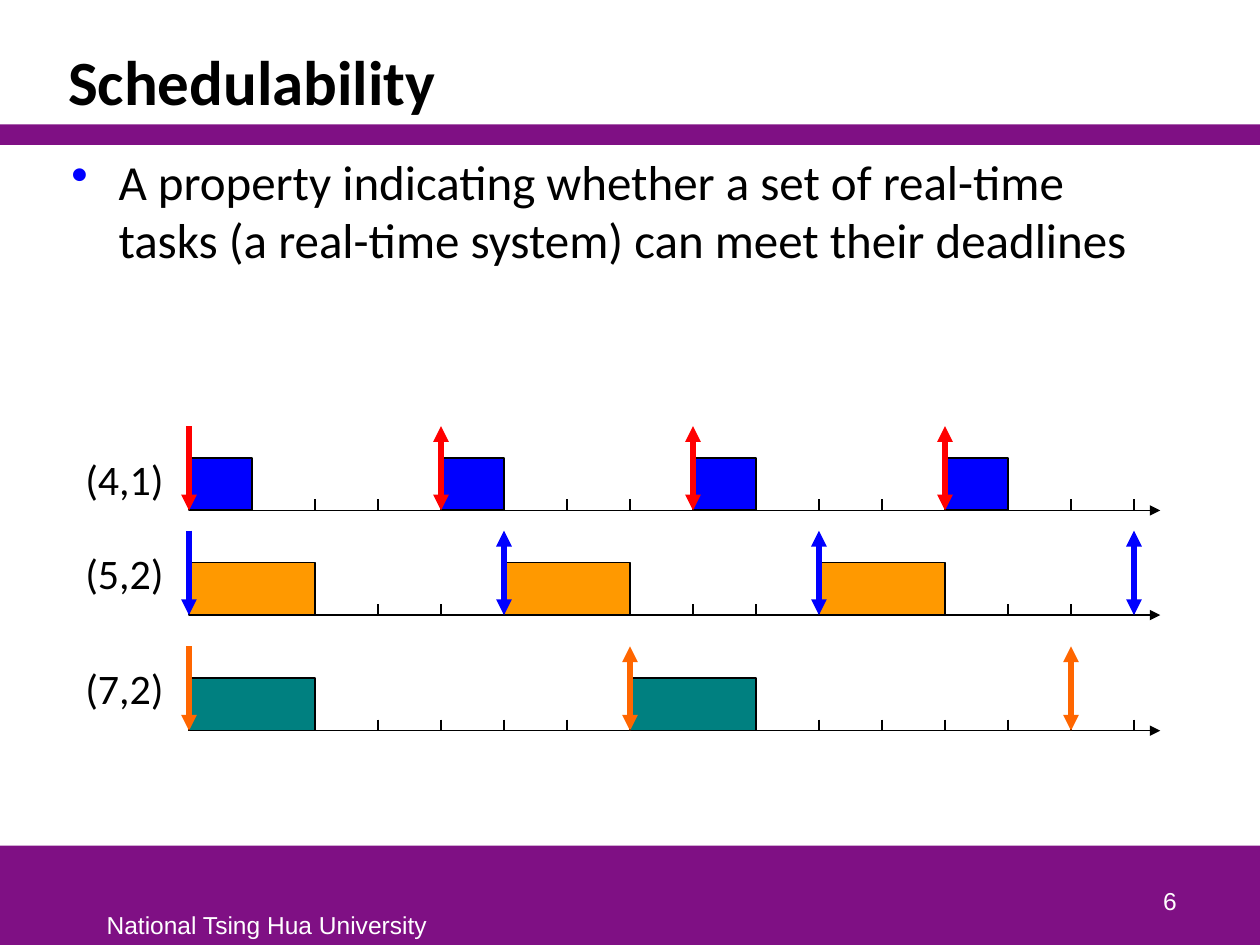
from lxml.etree import SubElement
from pptx import Presentation
from pptx.dml.color import RGBColor
from pptx.enum.shapes import MSO_CONNECTOR as CONN, MSO_SHAPE as SHAPE
from pptx.enum.text import MSO_ANCHOR as ANCHOR, PP_ALIGN as ALIGN
from pptx.oxml.ns import qn
from pptx.util import Cm, Pt

PURPLE, BLACK, WHITE, BLUE = "7F1084", "000000", "FFFFFF", "0000FF"
SLIDE_W, SLIDE_H = 25.4, 19.05
UNIT, LAST_TIME = 1.27, 15


def rgb(color):
    """Turn a hex string into a colour."""
    return RGBColor.from_string(color)


def add_bullet(p, color, indent):
    """Give a paragraph a coloured bullet with a hanging indent."""
    pPr = p._p.get_or_add_pPr()
    pPr.set("marL", str(Cm(indent)))
    pPr.set("indent", str(-Cm(indent)))
    SubElement(SubElement(pPr, qn("a:buClr")), qn("a:srgbClr"), val=color)
    SubElement(pPr, qn("a:buChar"), char="•")


def write(tf, text, size, color=BLACK, font="Calibri", bold=False, align=ALIGN.LEFT,
          anchor=ANCHOR.TOP, wrap=True, spacing=None, bullet=None):
    """Fill a text frame with one formatted paragraph."""
    tf.word_wrap, tf.vertical_anchor = wrap, anchor
    p = tf.paragraphs[0]
    p.alignment = align
    if spacing:
        p.line_spacing = spacing
    if bullet:
        add_bullet(p, bullet, 0.95)
    r = p.add_run()
    r.text = text
    r.font.name, r.font.size, r.font.bold = font, Pt(size), bold
    r.font.color.rgb = rgb(color)


def add_text(slide, box, text, size, **fmt):
    """Add a text box holding one paragraph."""
    sp = slide.shapes.add_textbox(*map(Cm, box))
    write(sp.text_frame, text, size, **fmt)


def add_rect(slide, box, fill, line=None):
    """Add a filled rectangle, outlined if a line colour is given."""
    sp = slide.shapes.add_shape(SHAPE.RECTANGLE, *map(Cm, box))
    sp.shadow.inherit = False
    sp.fill.solid()
    sp.fill.fore_color.rgb = rgb(fill)
    if line:
        sp.line.color.rgb = rgb(line)
        sp.line.width = Pt(1)
    else:
        sp.line.fill.background()


def add_line(slide, x1, y1, x2, y2, color=BLACK, width=0.75, ends=()):
    """Add a straight line with arrowheads at the named ends."""
    sp = slide.shapes.add_connector(CONN.STRAIGHT, Cm(x1), Cm(y1), Cm(x2), Cm(y2))
    sp.line.color.rgb = rgb(color)
    sp.line.width = Pt(width)
    for end in ends:
        SubElement(sp.line._get_or_add_ln(), qn(f"a:{end}"), type="triangle")
    SubElement(sp._element.spPr, qn("a:effectLst"))


def add_header(slide, box):
    """Place the title and the band below it."""
    x, y, w, h = box
    sp = slide.shapes.title
    sp.left, sp.top, sp.width, sp.height = map(Cm, (x + 1.12, y + 0.64, 22.78, 1.88))
    write(sp.text_frame, "Schedulability", 36, bold=True, anchor=ANCHOR.BOTTOM, spacing=0.85)
    add_rect(slide, (x, y + h - 0.41, w, 0.41), PURPLE)


def add_footer(slide, box):
    """Place the footer band with the university and the slide number."""
    x, y, w, h = box
    add_rect(slide, box, PURPLE)
    add_text(slide, (x + 1.9, y + 1.17, 7.01, 0.84), "National Tsing Hua University", 14,
             color=WHITE, font="Arial", wrap=False)
    add_text(slide, (x + w - 6.71, y + 0.25, 5.28, 1.27), "6", 14, color=WHITE,
             font="Arial", align=ALIGN.RIGHT, anchor=ANCHOR.BOTTOM)


def add_timeline(slide, box, period, runtime, job_color, arrow_color, label_dy):
    """Draw one periodic task: label, axis, ticks, jobs and release arrows."""
    x, y, w, h = box
    start, base = x + 2.34, y + h
    add_text(slide, (x, y + label_dy, 2.11, 1.3), f"({period},{runtime})", 24, wrap=False)
    add_line(slide, start, base, x + w - 0.43, base)
    add_line(slide, x + w - 0.64, base, x + w, base, ends=["tailEnd"])
    for t in range(LAST_TIME + 1):
        add_line(slide, start + t * UNIT, base - 0.22, start + t * UNIT, base)

    releases = range(0, LAST_TIME + 1, period)
    for t in releases:
        if t + runtime <= LAST_TIME:
            add_rect(slide, (start + t * UNIT, base - 1.06, runtime * UNIT, 1.06),
                     job_color, BLACK)
    for t in releases:
        ends = ["headEnd", "tailEnd"] if t else ["tailEnd"]
        add_line(slide, start + t * UNIT, y, start + t * UNIT, base, arrow_color, 3, ends)


def main():
    """Build the slide and save it."""
    prs = Presentation()
    prs.slide_width, prs.slide_height = Cm(SLIDE_W), Cm(SLIDE_H)
    slide = prs.slides.add_slide(prs.slide_layouts[5])
    add_header(slide, (0, 0, SLIDE_W, 2.92))
    add_footer(slide, (0, 17.05, SLIDE_W, 2))
    add_text(slide, (1.19, 2.92, 22.71, 14),
             "A property indicating whether a set of real-time tasks "
             "(a real-time system) can meet their deadlines", 28, bullet=BLUE)
    tasks = [
        (8.59, 4, 1, BLUE, "FF0000", 0.43),
        (10.7, 5, 2, "FF9900", BLUE, 0.22),
        (13.03, 7, 2, "008080", "FF6600", 0.2),
    ]
    for top, *task in tasks:
        add_timeline(slide, (1.47, top, 21.92, 1.7), *task)
    prs.save("out.pptx")


if __name__ == "__main__":
    main()
